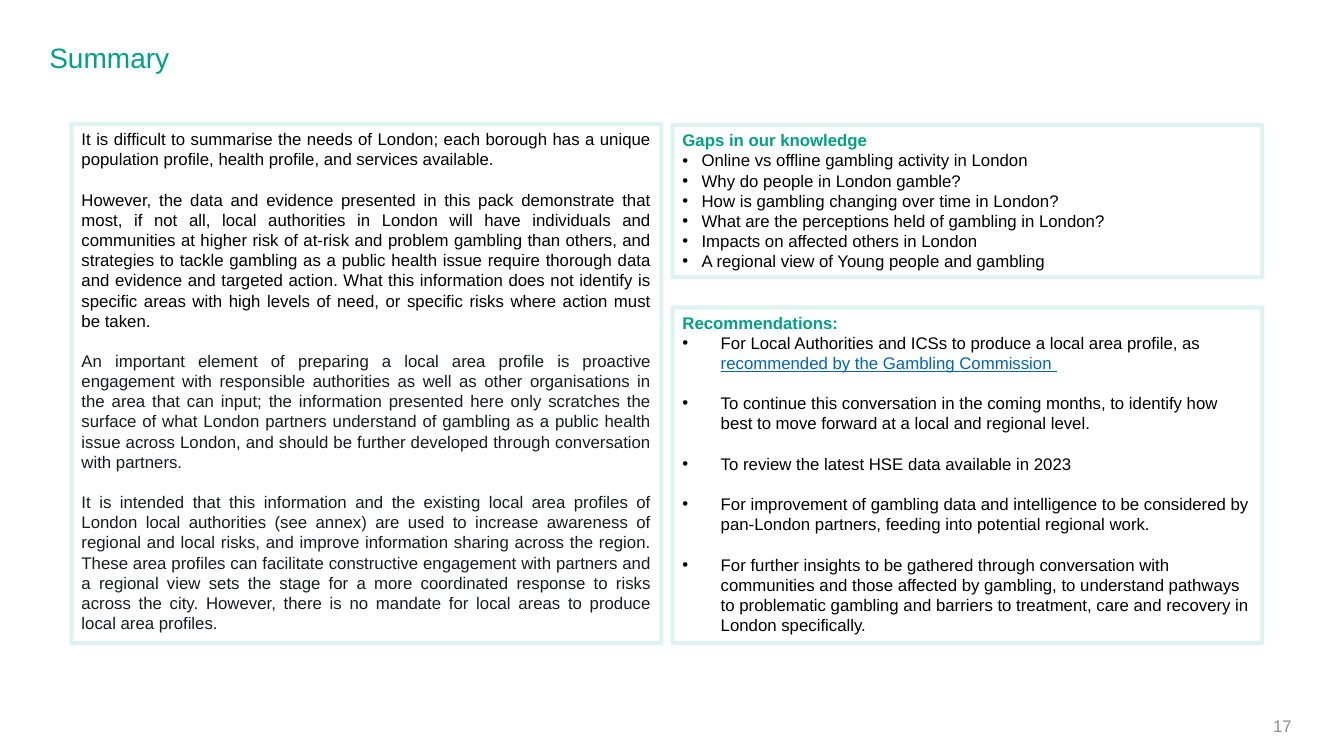
"""Build the summary slide on gambling needs in London."""
import dataclasses
import typing

import lxml.etree
import pptx
import pptx.dml.color
import pptx.enum.shapes
import pptx.enum.text
import pptx.oxml.ns
import pptx.util

PX = 9144
LINE_HEIGHT = pptx.util.Pt(14.4)
COLOURS = {
    "green": "01A188",
    "black": "000000",
    "ink": "171B1F",
    "link": "0063BE",
    "grey": "8C8C8C",
}
ALIGN = pptx.enum.text.PP_ALIGN
ANCHOR = pptx.enum.text.MSO_ANCHOR


@dataclasses.dataclass(frozen=True)
class Span:
    text: str
    colour: str = "black"
    size: int = 12
    bold: bool = False
    underline: bool = False


@dataclasses.dataclass(frozen=True)
class Para:
    spans: tuple[Span, ...]
    align: typing.Any = ALIGN.LEFT
    indent: int = 0
    gap: bool = False
    spacing: typing.Any = LINE_HEIGHT


@dataclasses.dataclass(frozen=True)
class Box:
    left: int
    top: int
    width: int
    height: int
    paras: tuple[Para, ...]
    framed: bool = True
    anchor: typing.Any = ANCHOR.TOP


def apply_format(target: typing.Any, values: dict[str, typing.Any]) -> None:
    for name, value in values.items():
        setattr(target, name, value)


def rgb(colour: str) -> pptx.dml.color.RGBColor:
    return pptx.dml.color.RGBColor.from_string(COLOURS[colour])


def heading(text: str) -> Para:
    return Para((Span(text, "green", bold=True),))


def bullets(items: list[tuple[Span, ...]], indent: int, gap: bool) -> tuple[Para, ...]:
    return tuple(
        Para(spans, indent=indent, gap=gap and index > 0)
        for index, spans in enumerate(items)
    )


def prose(items: list[Span]) -> tuple[Para, ...]:
    return tuple(
        Para((span,), ALIGN.JUSTIFY, gap=index > 0) for index, span in enumerate(items)
    )


def add_bullet(paragraph: typing.Any, indent: int) -> None:
    properties = paragraph._p.get_or_add_pPr()
    properties.set("marL", str(indent * PX))
    properties.set("indent", str(-indent * PX))
    for tag, key, value in (("a:buFont", "typeface", "Arial"), ("a:buChar", "char", "•")):
        element = lxml.etree.SubElement(properties, pptx.oxml.ns.qn(tag))
        element.set(key, value)


def write_para(paragraph: typing.Any, para: Para) -> None:
    if para.indent:
        add_bullet(paragraph, para.indent)
    apply_format(paragraph, {
        "alignment": para.align,
        "line_spacing": para.spacing,
        "space_before": LINE_HEIGHT if para.gap else pptx.util.Pt(0),
    })
    for span in para.spans:
        run = paragraph.add_run()
        run.text = span.text
        apply_format(run.font, {
            "name": "Arial",
            "size": pptx.util.Pt(span.size),
            "bold": span.bold,
            "underline": span.underline,
        })
        run.font.color.rgb = rgb(span.colour)


def add_frame(shape: typing.Any) -> None:
    shape.shadow.inherit = False
    shape.fill.background()
    shape.line.width = pptx.util.Pt(3)
    shape.line.color.rgb = rgb("green")
    colour = shape.line._ln.find(".//" + pptx.oxml.ns.qn("a:srgbClr"))
    lxml.etree.SubElement(colour, pptx.oxml.ns.qn("a:alpha")).set("val", "12000")


def draw_box(page: typing.Any, box: Box) -> None:
    place = [side * PX for side in (box.left, box.top, box.width, box.height)]
    if box.framed:
        shape = page.shapes.add_shape(pptx.enum.shapes.MSO_SHAPE.RECTANGLE, *place)
        add_frame(shape)
    else:
        shape = page.shapes.add_textbox(*place)
    frame = shape.text_frame
    apply_format(frame, {"word_wrap": True, "vertical_anchor": box.anchor})
    for index, para in enumerate(box.paras):
        paragraph = frame.add_paragraph() if index else frame.paragraphs[0]
        write_para(paragraph, para)


TITLE = Box(39, 39, 1252, 92, (Para((Span("Summary", "green", 20),), spacing=0.9),), False)
NUMBER = Box(1208, 695, 83, 40, (Para((Span("17", "grey"),), ALIGN.RIGHT, spacing=1.0),),
             False, ANCHOR.BOTTOM)
RECOMMENDATIONS = Box(667, 305, 585, 333, (heading("Recommendations:"),) + bullets([
    (Span("For Local Authorities and ICSs to produce a local area profile, as "),
     Span("recommended by the Gambling Commission ", "link", underline=True)),
    (Span("To continue this conversation in the coming months, to identify how best to "
          "move forward at a local and regional level."),),
    (Span("To review the latest HSE data available in 2023"),),
    (Span("For improvement of gambling data and intelligence to be considered by "
          "pan-London partners, feeding into potential regional work."),),
    (Span("For further insights to be gathered through conversation with communities and "
          "those affected by gambling, to understand pathways to problematic gambling and "
          "barriers to treatment, care and recovery in London specifically."),),
], 38, True))
GAPS = Box(667, 124, 585, 151, (heading("Gaps in our knowledge"),) + bullets([
    (Span("Online vs offline gambling activity in London"),),
    (Span("Why do people in London gamble?"),),
    (Span("How is gambling changing over time in London?"),),
    (Span("What are the perceptions held of gambling in London?"),),
    (Span("Impacts on affected others in London"),),
    (Span("A regional view of Young people and gambling"),),
], 19, False))
OVERVIEW = Box(71, 123, 585, 515, prose([
    Span("It is difficult to summarise the needs of London; each borough has a unique "
         "population profile, health profile, and services available."),
    Span("However, the data and evidence presented in this pack demonstrate that most, if "
         "not all, local authorities in London will have individuals and communities at "
         "higher risk of at-risk and problem gambling than others, and strategies to tackle "
         "gambling as a public health issue require thorough data and evidence and targeted "
         "action. What this information does not identify is specific areas with high levels "
         "of need, or specific risks where action must be taken."),
    Span("An important element of preparing a local area profile is proactive engagement "
         "with responsible authorities as well as other organisations in the area that can "
         "input; the information presented here only scratches the surface of what London "
         "partners understand of gambling as a public health issue across London, and should "
         "be further developed through conversation with partners.", "ink"),
    Span("It is intended that this information and the existing local area profiles of "
         "London local authorities (see annex) are used to increase awareness of regional "
         "and local risks, and improve information sharing across the region. These area "
         "profiles can facilitate constructive engagement with partners and a regional view "
         "sets the stage for a more coordinated response to risks across the city. However, "
         "there is no mandate for local areas to produce local area profiles.", "ink"),
]))


def main() -> None:
    deck = pptx.Presentation()
    apply_format(deck, {"slide_width": 1333 * PX, "slide_height": 750 * PX})
    page = deck.slides.add_slide(deck.slide_layouts[6])
    for box in (TITLE, NUMBER, RECOMMENDATIONS, GAPS, OVERVIEW):
        draw_box(page, box)
    deck.save("out.pptx")


if __name__ == "__main__":
    main()
